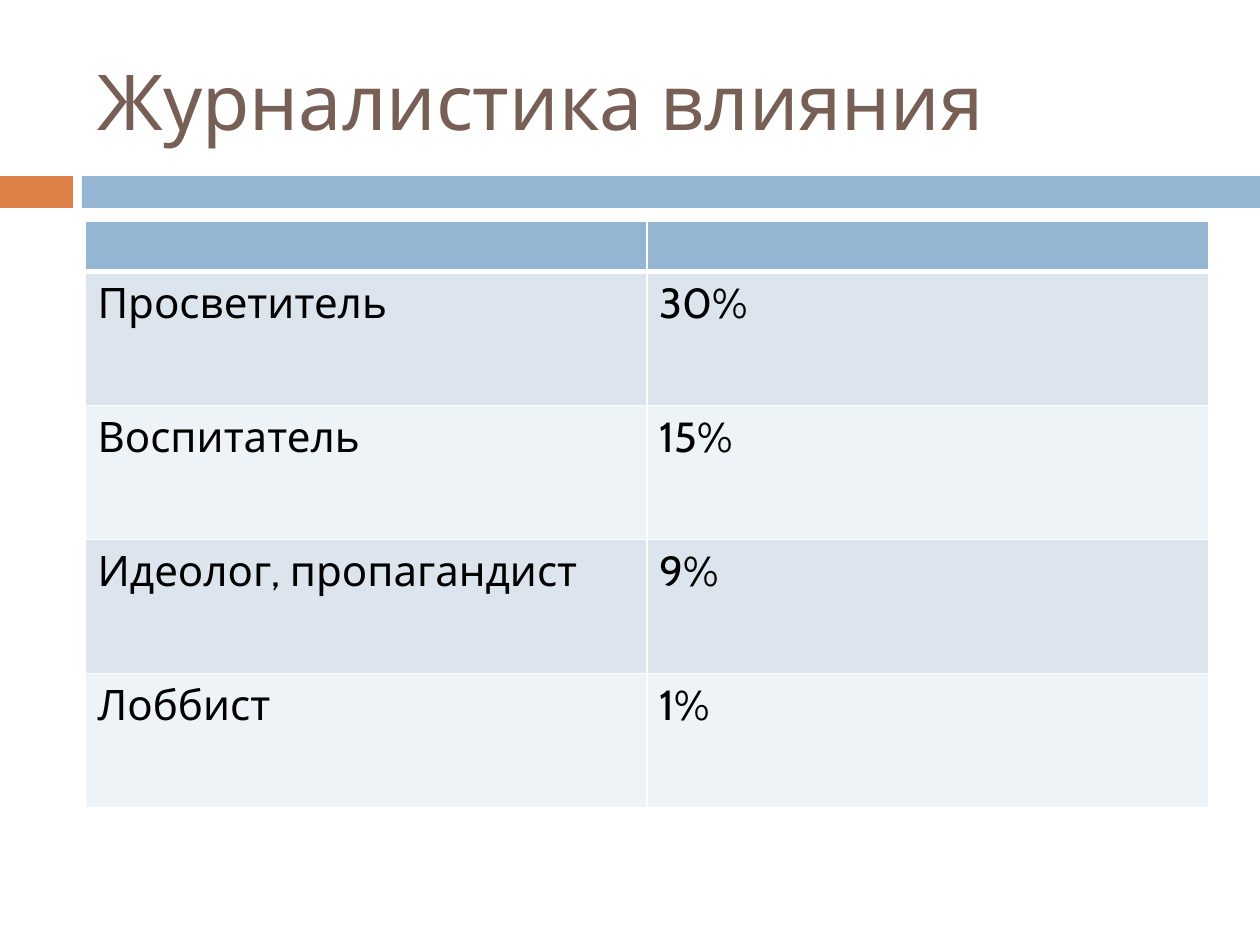
"""Builds a slide with a table of journalists' roles of influence."""
from lxml import etree
from pptx import Presentation
from pptx import util as u
from pptx.dml.color import RGBColor
from pptx.enum import shapes, text
from pptx.oxml import ns

TITLE = "Журналистика влияния"
ROWS = [
    ("", ""),
    ("Просветитель", "30%"),
    ("Воспитатель", "15%"),
    ("Идеолог, пропагандист", "9%"),
    ("Лоббист", "1%"),
]
BARS = [(0, 73, "DD8047"), (82, 1178, "94B6D2")]
BAR_TOP, BAR_HEIGHT = 176, 32
LEFT, WIDTH = 85, 1124
TITLE_TOP, TITLE_HEIGHT = 32, 136
TABLE_TOP, HEADER_HEIGHT, ROW_HEIGHT = 221, 50, 134
HEADER_FILL, BAND_FILLS = "94B6D2", ("DCE5EE", "EEF3F7")
FONT = "Cabin"
EMU_PER_PX = 914400 / 126


def px(*lengths):
    return [u.Emu(round(length * EMU_PER_PX)) for length in lengths]


def paint(fill, color):
    fill.solid()
    fill.fore_color.rgb = RGBColor.from_string(color)


def write(frame, words, size, color):
    frame.text = words
    for span in frame.paragraphs[0].runs:
        span.font.name = FONT
        span.font.size = u.Pt(size)
        span.font.color.rgb = RGBColor.from_string(color)


def add_border(cell, side, points):
    props = cell._tc.get_or_add_tcPr()
    line = etree.SubElement(props, ns.qn(f"a:ln{side}"), w=str(u.Pt(points)))
    fill = etree.SubElement(line, ns.qn("a:solidFill"))
    etree.SubElement(fill, ns.qn("a:srgbClr"), val="FFFFFF")


def add_bars(page):
    for left, width, color in BARS:
        bar = page.shapes.add_shape(shapes.MSO_SHAPE.RECTANGLE,
                                    *px(left, BAR_TOP, width, BAR_HEIGHT))
        bar.shadow.inherit = False
        bar.line.fill.background()
        paint(bar.fill, color)


def add_title(page):
    box = page.shapes.add_textbox(*px(LEFT, TITLE_TOP, WIDTH, TITLE_HEIGHT))
    box.text_frame.word_wrap = True
    box.text_frame.vertical_anchor = text.MSO_ANCHOR.MIDDLE
    write(box.text_frame, TITLE, 44, "775F55")


def add_roles(page):
    heights = [HEADER_HEIGHT] + [ROW_HEIGHT] * (len(ROWS) - 1)
    frame = page.shapes.add_table(len(ROWS), len(ROWS[0]),
                                  *px(LEFT, TABLE_TOP, WIDTH, sum(heights)))
    table = frame.table
    for r, (row, height) in enumerate(zip(ROWS, heights)):
        table.rows[r].height = px(height)[0]
        for c, words in enumerate(row):
            cell = table.cell(r, c)
            write(cell.text_frame, words, 24, "000000")
            for side in "LRTB":
                under_header = (r, side) in ((0, "B"), (1, "T"))
                add_border(cell, side, 3 if under_header else 1)
            paint(cell.fill, BAND_FILLS[(r - 1) % 2] if r else HEADER_FILL)


def main():
    deck = Presentation()
    deck.slide_width, deck.slide_height = px(1260, 945)
    page = deck.slides.add_slide(deck.slide_layouts[6])
    add_bars(page)
    add_title(page)
    add_roles(page)
    deck.save("out.pptx")


if __name__ == "__main__":
    main()
